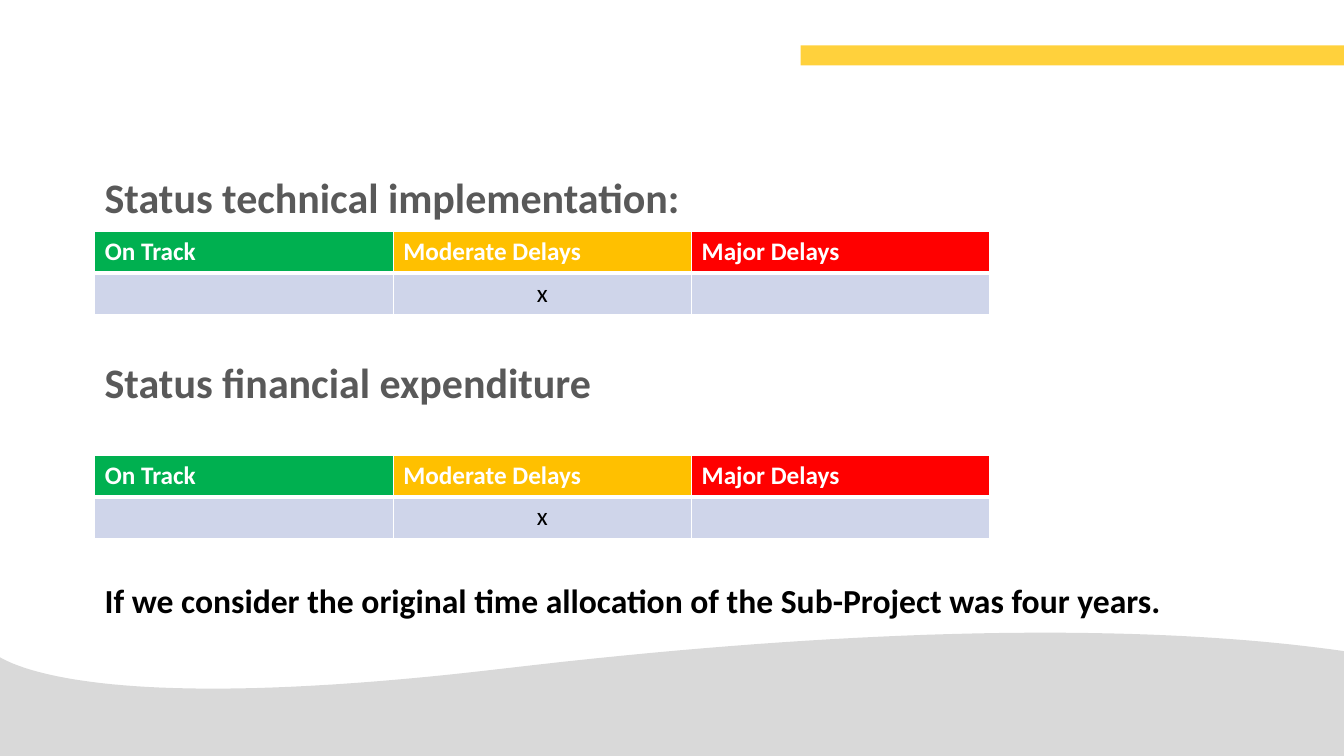
from dataclasses import dataclass

from lxml import etree
from pptx import Presentation
from pptx import util as u
from pptx.dml.color import RGBColor
from pptx.enum import shapes, text
from pptx.oxml import ns


@dataclass(frozen=True)
class Theme:
    font: str = "Calibri"
    heading_size: int = 30
    remark_size: int = 24
    table_size: int = 18
    white: str = "FFFFFF"
    black: str = "000000"
    heading: str = "595959"
    wave: str = "D9D9D9"
    accent: str = "FFD13C"
    mark_row: str = "CFD5EA"


@dataclass(frozen=True)
class Status:
    label: str
    color: str
    mark: str


@dataclass(frozen=True)
class Curve:
    start: tuple[float, float]
    control_a: tuple[float, float]
    control_b: tuple[float, float]
    end: tuple[float, float]


THEME = Theme()
LEFT = 0.94
TABLE_TOPS = (2.3, 4.52)
COLUMN_WIDTH = 2.96
ROW_HEIGHT = 0.41
CURVE_STEPS = 40
STATUSES = (
    Status("On Track", "00B050", ""),
    Status("Moderate Delays", "FFC000", "x"),
    Status("Major Delays", "FF0000", ""),
)
HEADINGS = ("Status technical implementation:", "Status financial expenditure")
REMARK = "If we consider the original time allocation of the Sub-Project was four years."
WAVE = (
    Curve((13.33, 6.46), (11.65, 6.22), (9.02, 6.16), (5.02, 6.63)),
    Curve((5.02, 6.63), (1.33, 7.07), (0.26, 6.68), (-0.02, 6.51)),
)


def curve_point(curve: Curve, t: float) -> tuple[int, int]:
    weights = ((1 - t) ** 3, 3 * t * (1 - t) ** 2, 3 * t**2 * (1 - t), t**3)
    anchors = (curve.start, curve.control_a, curve.control_b, curve.end)
    x, y = (sum(w * a[axis] for w, a in zip(weights, anchors)) for axis in (0, 1))
    return u.Inches(x), u.Inches(y)


def paint(shape, color: str) -> None:
    shape.shadow.inherit = False
    shape.fill.solid()
    shape.fill.fore_color.rgb = RGBColor.from_string(color)
    shape.line.fill.background()


def add_wave(slide) -> None:
    builder = slide.shapes.build_freeform(u.Inches(13.33), u.Inches(7.5))
    points = [
        curve_point(curve, step / CURVE_STEPS)
        for curve in WAVE
        for step in range(CURVE_STEPS + 1)
    ]
    builder.add_line_segments([*points, (u.Inches(-0.02), u.Inches(7.5))], close=True)
    paint(builder.convert_to_shape(), THEME.wave)


def add_accent_bar(slide) -> None:
    bar = slide.shapes.add_shape(
        shapes.MSO_SHAPE.RECTANGLE,
        u.Inches(7.94), u.Inches(0.45), u.Inches(5.39), u.Inches(0.2),
    )
    paint(bar, THEME.accent)


def style(paragraph, size: int, color: str, bold: bool) -> None:
    paragraph.font.name = THEME.font
    paragraph.font.size = u.Pt(size)
    paragraph.font.bold = bold
    paragraph.font.color.rgb = RGBColor.from_string(color)


def add_text_frame(slide, top: float, width: float, height: float):
    box = slide.shapes.add_textbox(
        u.Inches(LEFT), u.Inches(top), u.Inches(width), u.Inches(height)
    )
    box.text_frame.word_wrap = True
    return box.text_frame


def add_headings(slide) -> None:
    frame = add_text_frame(slide, 1.6, 11.44, 5.24)
    for index, heading in enumerate(HEADINGS):
        paragraph = frame.add_paragraph() if index else frame.paragraphs[0]
        paragraph.text = heading
        paragraph.line_spacing = u.Pt(40)
        paragraph.space_after = u.Pt(4)
        if index:
            paragraph.space_before = u.Pt(88)
        style(paragraph, THEME.heading_size, THEME.heading, True)


def add_remark(slide) -> None:
    frame = add_text_frame(slide, 5.7, 10.68, 0.5)
    frame.auto_size = text.MSO_AUTO_SIZE.SHAPE_TO_FIT_TEXT
    frame.paragraphs[0].text = REMARK
    style(frame.paragraphs[0], THEME.remark_size, THEME.black, True)


def set_borders(cell, top: int, bottom: int) -> None:
    properties = cell._tc.get_or_add_tcPr()
    widths = {"lnL": 1, "lnR": 1, "lnT": top, "lnB": bottom}
    for index, (side, width) in enumerate(widths.items()):
        line = etree.Element(ns.qn(f"a:{side}"), w=str(u.Pt(width)))
        fill = etree.SubElement(line, ns.qn("a:solidFill"))
        etree.SubElement(fill, ns.qn("a:srgbClr"), val=THEME.white)
        properties.insert(index, line)


def fill_cell(cell, label: str, fill: str, color: str, is_header: bool) -> None:
    cell.fill.solid()
    cell.fill.fore_color.rgb = RGBColor.from_string(fill)
    paragraph = cell.text_frame.paragraphs[0]
    paragraph.text = label
    if not is_header:
        paragraph.alignment = text.PP_ALIGN.CENTER
    style(paragraph, THEME.table_size, color, is_header)
    set_borders(cell, 1 if is_header else 3, 3 if is_header else 1)


def add_status_table(slide, top: float) -> None:
    table = slide.shapes.add_table(
        2, len(STATUSES), u.Inches(LEFT), u.Inches(top),
        u.Inches(COLUMN_WIDTH * len(STATUSES)), u.Inches(ROW_HEIGHT * 2),
    ).table
    for row in table.rows:
        row.height = u.Inches(ROW_HEIGHT)
    for column, status in enumerate(STATUSES):
        table.columns[column].width = u.Inches(COLUMN_WIDTH)
        fill_cell(table.cell(0, column), status.label, status.color, THEME.white, True)
        fill_cell(table.cell(1, column), status.mark, THEME.mark_row, THEME.black, False)


def main() -> None:
    presentation = Presentation()
    presentation.slide_width = u.Inches(13.33)
    presentation.slide_height = u.Inches(7.5)
    slide = presentation.slides.add_slide(presentation.slide_layouts[6])
    add_wave(slide)
    add_accent_bar(slide)
    add_headings(slide)
    for top in TABLE_TOPS:
        add_status_table(slide, top)
    add_remark(slide)
    presentation.save("out.pptx")


if __name__ == "__main__":
    main()
